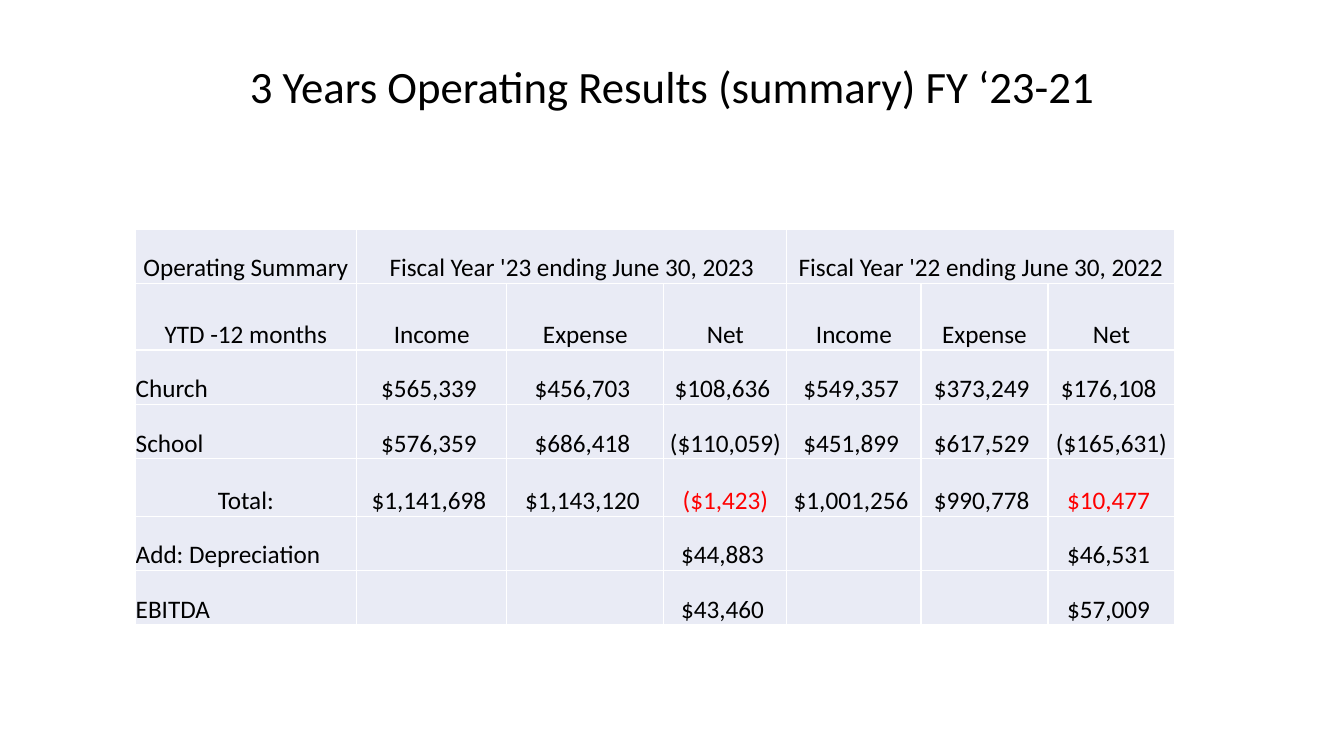
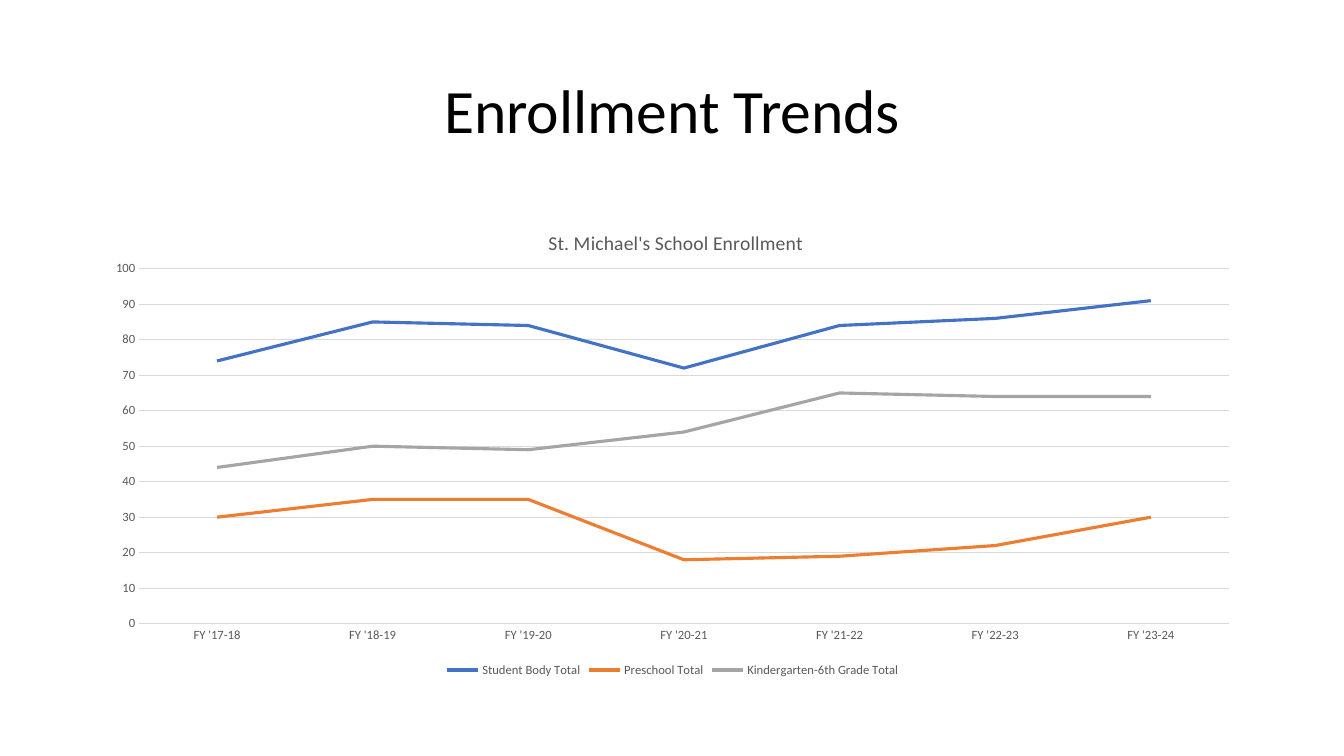
from lxml.etree import SubElement
from pptx import Presentation
from pptx.chart.data import CategoryChartData
from pptx.dml.color import RGBColor
from pptx.enum.chart import XL_CHART_TYPE, XL_LEGEND_POSITION, XL_TICK_MARK
from pptx.enum.text import MSO_ANCHOR, MSO_AUTO_SIZE, PP_ALIGN
from pptx.oxml import parse_xml
from pptx.oxml.ns import nsdecls, qn
from pptx.util import Cm, Pt

BLACK = RGBColor(0x00, 0x00, 0x00)
WHITE = RGBColor(0xFF, 0xFF, 0xFF)
RED = RGBColor(0xFF, 0x00, 0x00)
PALE_BLUE = RGBColor(0xE9, 0xEB, 0xF5)
DARK_GREY = RGBColor(0x59, 0x59, 0x59)
GRID_GREY = RGBColor(0xD9, 0xD9, 0xD9)
BLUE = RGBColor(0x44, 0x72, 0xC4)
ORANGE = RGBColor(0xED, 0x7D, 0x31)
GREY = RGBColor(0xA5, 0xA5, 0xA5)

FONT = "Calibri"
MARGIN, CONTENT_WIDTH = 2.34, 29.21


def set_font(font, size, color):
    font.name, font.size, font.bold = FONT, Pt(size), False
    font.color.rgb = color


def write(frame, text, size=18, color=BLACK, align=PP_ALIGN.CENTER, spacing=1.0):
    """Fill a text frame with one formatted paragraph."""
    para = frame.paragraphs[0]
    para.alignment, para.line_spacing = align, spacing
    span = para.add_run()
    span.text = text
    set_font(span.font, size, color)


def money(amount):
    """Accounting style: losses in brackets, gains with room for one."""
    return f"(${-amount:,})" if amount < 0 else f"${amount:,} "


def set_borders(cell, color, width):
    properties = cell._tc.get_or_add_tcPr()
    for side in ("lnL", "lnR", "lnT", "lnB"):
        properties.append(parse_xml(
            f'<a:{side} {nsdecls("a")} w="{Pt(width)}"><a:solidFill>'
            f'<a:srgbClr val="{color}"/></a:solidFill></a:{side}>'))


def set_layout(element, inner=False, **fractions):
    """Place a chart part by fractions of the chart area."""
    for old in element.findall(qn("c:layout")):
        element.remove(old)
    layout = parse_xml(f'<c:layout {nsdecls("c")}/>')
    manual = SubElement(layout, qn("c:manualLayout"))
    if inner:
        SubElement(manual, qn("c:layoutTarget")).set("val", "inner")
    for name in ("xMode", "yMode"):
        SubElement(manual, qn(f"c:{name}")).set("val", "edge")
    for name, value in fractions.items():
        SubElement(manual, qn(f"c:{name}")).set("val", str(value))
    text = element.find(qn("c:tx"))
    element.insert(0 if text is None else 1, layout)


class Report:
    """Holds the deck, its style and the current page."""

    def __init__(self):
        self.deck = Presentation()
        self.deck.slide_width, self.deck.slide_height = Cm(33.87), Cm(19.05)
        self.page = None

    def add_page(self, title, size=44, bottom_inset=0.13):
        self.page = self.deck.slides.add_slide(self.deck.slide_layouts[5])
        box = self.page.shapes.title
        box.left, box.top = Cm(MARGIN), Cm(1.02)
        box.width, box.height = Cm(CONTENT_WIDTH), Cm(3.68)
        frame = box.text_frame
        frame.word_wrap, frame.auto_size = True, MSO_AUTO_SIZE.NONE
        frame.vertical_anchor = MSO_ANCHOR.MIDDLE
        frame.margin_bottom = Cm(bottom_inset)
        write(frame, title, size, spacing=0.9)

    def add_table(self, left, top, widths, heights, rows, merges=(), left_cells=(), red_cells=()):
        table = self.page.shapes.add_table(
            len(heights), len(widths), Cm(left), Cm(top),
            Cm(sum(widths)), Cm(sum(heights))).table
        table.first_row = table.horz_banding = False
        for column, width in zip(table.columns, widths):
            column.width = Cm(width)
        for line, height in zip(table.rows, heights):
            line.height = Cm(height)
        for row, first, last in merges:
            table.cell(row, first).merge(table.cell(row, last))
        for row, values in enumerate(rows):
            for column, value in enumerate(values):
                cell, place = table.cell(row, column), (row, column)
                set_borders(cell, WHITE, 1)
                cell.fill.solid()
                cell.fill.fore_color.rgb = PALE_BLUE
                cell.vertical_anchor = MSO_ANCHOR.BOTTOM
                cell.margin_left = cell.margin_right = cell.margin_top = Cm(0.02)
                cell.margin_bottom = 0
                if value is None:
                    continue
                write(cell.text_frame,
                      value if isinstance(value, str) else money(value),
                      color=RED if place in red_cells else BLACK,
                      align=PP_ALIGN.LEFT if place in left_cells else PP_ALIGN.CENTER)

    def add_line_chart(self, top, height, title, categories, series):
        data = CategoryChartData()
        data.categories = categories
        for name, values, _ in series:
            data.add_series(name, values)
        chart = self.page.shapes.add_chart(
            XL_CHART_TYPE.LINE, Cm(MARGIN), Cm(top),
            Cm(CONTENT_WIDTH), Cm(height), data).chart
        set_font(chart.font, 10, BLACK)

        # Title and plot area
        write(chart.chart_title.text_frame, title, 14, DARK_GREY)
        chart.chart_title.include_in_layout = False
        set_layout(chart.chart_title._element, x=0.39, y=0.05)
        set_layout(chart._chartSpace.chart.plotArea, inner=True,
                   x=0.04, y=0.14, w=0.94, h=0.74)

        # Axes
        for axis in (chart.category_axis, chart.value_axis):
            axis.major_tick_mark = axis.minor_tick_mark = XL_TICK_MARK.NONE
            set_font(axis.tick_labels.font, 9, DARK_GREY)
        chart.value_axis.minimum_scale, chart.value_axis.maximum_scale = 0, 100
        chart.value_axis.major_unit = 10
        chart.value_axis.format.line.fill.background()
        for line in (chart.category_axis.format.line,
                     chart.value_axis.major_gridlines.format.line):
            line.color.rgb, line.width = GRID_GREY, Pt(0.75)

        # Legend
        chart.has_legend = True
        chart.legend.position = XL_LEGEND_POSITION.BOTTOM
        chart.legend.include_in_layout = False
        set_font(chart.legend.font, 9, DARK_GREY)

        # Lines
        chart.plots[0].vary_by_categories = False
        for plotted, (_, _, color) in zip(chart.plots[0].series, series):
            plotted.smooth = False
            plotted.format.line.color.rgb = color
            plotted.format.line.width = Pt(2.25)


def main():
    report = Report()

    # Operating results
    report.add_page("3 Years Operating Results (summary) FY ‘23-21", size=32, bottom_inset=1.37)
    headings = ["Income", "Expense", "Net"]
    report.add_table(
        3.4, 5.77,
        widths=[5.59, 3.78, 3.96, 3.1, 3.38, 3.2, 3.2],
        heights=[1.37, 1.68, 1.37, 1.37, 1.45, 1.37, 1.37],
        rows=[
            ["Operating Summary", "Fiscal Year '23 ending June 30, 2023", None, None,
             "Fiscal Year '22 ending June 30, 2022", None, None],
            ["YTD -12 months", *headings, *headings],
            ["Church", 565339, 456703, 108636, 549357, 373249, 176108],
            ["School", 576359, 686418, -110059, 451899, 617529, -165631],
            ["Total:", 1141698, 1143120, -1423, 1001256, 990778, 10477],
            ["Add: Depreciation", None, None, 44883, None, None, 46531],
            ["EBITDA", None, None, 43460, None, None, 57009],
        ],
        merges=[(0, 1, 3), (0, 4, 6)],
        left_cells=[(row, 0) for row in (2, 3, 5, 6)],
        red_cells=[(4, 3), (4, 6)])

    # Enrollment
    report.add_page("Enrollment Trends")
    report.add_line_chart(
        5.08, 12.09, "St. Michael's School Enrollment",
        [f"FY '{year}-{year + 1}" for year in range(17, 24)],
        [("Student Body Total", (74, 85, 84, 72, 84, 86, 91), BLUE),
         ("Preschool Total", (30, 35, 35, 18, 19, 22, 30), ORANGE),
         ("Kindergarten-6th Grade Total", (44, 50, 49, 54, 65, 64, 64), GREY)])

    report.deck.save("out.pptx")


if __name__ == "__main__":
    main()
